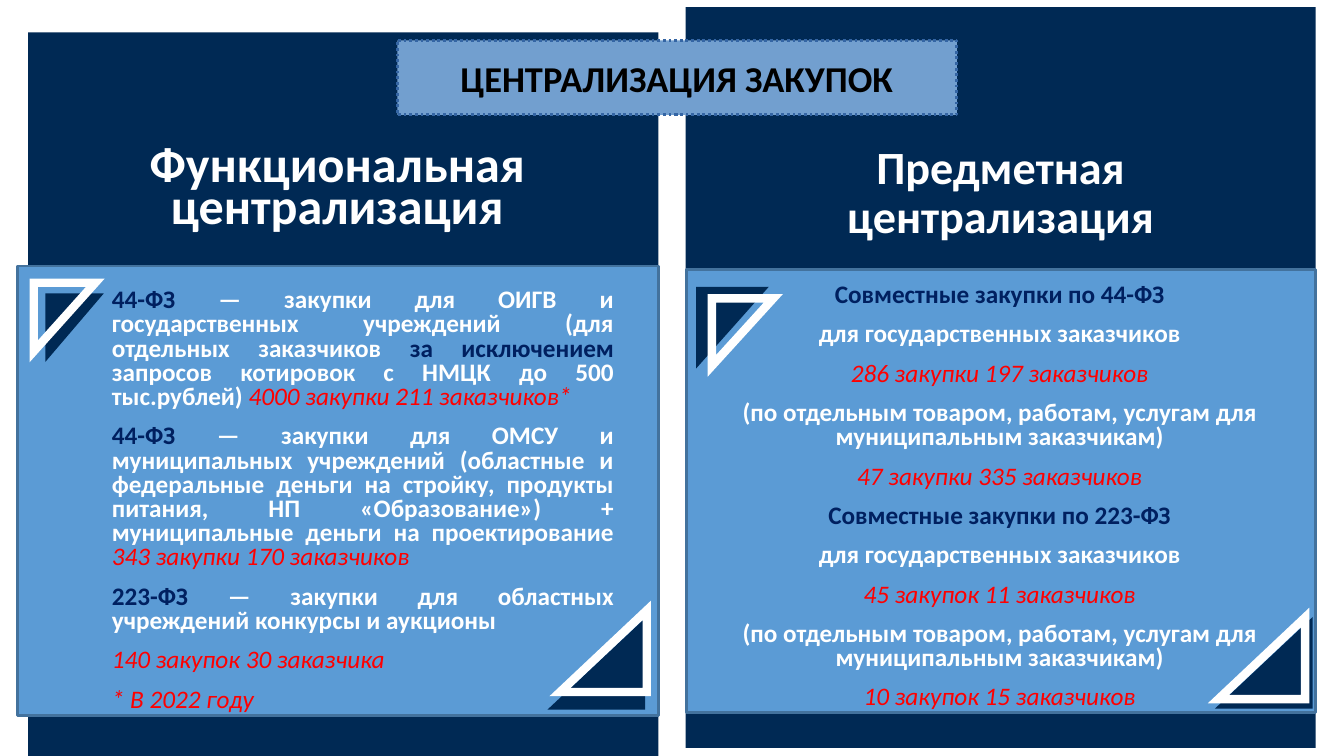
from lxml.etree import SubElement
from pptx import Presentation
from pptx.dml.color import RGBColor
from pptx.enum.dml import MSO_LINE
from pptx.enum.shapes import MSO_SHAPE
from pptx.enum.text import MSO_ANCHOR, MSO_AUTO_SIZE, PP_ALIGN
from pptx.oxml.ns import qn
from pptx.util import Pt

PX = 9144
HEX = {
    "navy": "002954", "ink": "002060", "panel": "5B9BD5", "edge": "43729D",
    "banner": "729FCF", "rim": "3465A4", "white": "FFFFFF", "red": "FF0000",
    "black": "000000",
}
FONT = "Calibri"

LAWS = [
    [("44-ФЗ", "ink"),
     (" — закупки для ОИГВ и государственных учреждений (для отдельных заказчиков ", "white"),
     ("за исключением", "ink"),
     (" запросов котировок с НМЦК до 500 тыс.рублей) ", "white"),
     ("4000 закупки 211 заказчиков*", "red")],
    [("44-ФЗ", "ink"),
     (" — закупки для ОМСУ и муниципальных учреждений (областные и федеральные деньги "
      "на стройку, продукты питания, НП «Образование») + муниципальные деньги "
      "на проектирование ", "white"),
     ("343 закупки 170 заказчиков", "red")],
    [("223-ФЗ", "ink"),
     (" — закупки для областных учреждений конкурсы и аукционы", "white")],
    [("140 закупок 30 заказчика", "red")],
    [("* В 2022 году", "red")],
]
JOINT = [
    ("44-ФЗ", "286 закупки 197 заказчиков", "47 закупки 335 заказчиков"),
    ("223-ФЗ", "45 закупок 11 заказчиков", "10 закупок 15 заказчиков"),
]


def color(name):
    return RGBColor.from_string(HEX[name])


def place(shape, box):
    shape.left, shape.top, shape.width, shape.height = [v * PX for v in box]


def paint(shape, fill=None, line=None, width=2):
    if fill:
        shape.fill.solid()
        shape.fill.fore_color.rgb = color(fill)
    else:
        shape.fill.background()
    if line:
        shape.line.color.rgb = color(line)
        shape.line.width = Pt(width)
    else:
        shape.line.fill.background()


def draw(slide, kind, box, fill=None, line=None, width=2):
    shape = slide.shapes.add_shape(kind, *[v * PX for v in box])
    shape.shadow.inherit = False
    paint(shape, fill, line, width)
    return shape


def corner(slide, turn, solid, frame):
    base = draw(slide, MSO_SHAPE.RIGHT_TRIANGLE, solid, fill="navy")
    rim = draw(slide, MSO_SHAPE.RIGHT_TRIANGLE, frame, line="white", width=6)
    SubElement(rim.line.fill._xPr, qn("a:miter"), lim="800000")
    base.rotation = rim.rotation = turn


def write(holder, box, paras, size, align, space=1.0, before=0, after=0,
          anchor=MSO_ANCHOR.TOP):
    place(holder, box)
    tree = holder.element.getparent()
    tree.append(holder.element)
    frame = holder.text_frame
    frame.word_wrap = True
    frame.auto_size = MSO_AUTO_SIZE.NONE
    frame.vertical_anchor = anchor
    for i, runs in enumerate(paras):
        para = frame.add_paragraph() if i else frame.paragraphs[0]
        para.alignment = align
        para.line_spacing = space
        para.space_before = Pt(before)
        para.space_after = Pt(after)
        para.font.name = FONT
        para.font.size = Pt(size)
        props = para._p.get_or_add_pPr()
        props.set("marL", "0")
        props.set("indent", "0")
        none = SubElement(props, qn("a:buNone"))
        props.find(qn("a:defRPr")).addprevious(none)
        for text, tone in runs:
            run = para.add_run()
            run.text = text
            run.font.color.rgb = color(tone)
            run.font.bold = tone != "red"
            run.font.italic = tone == "red"


def joint():
    for law, state, town in JOINT:
        yield [(f"Совместные закупки по {law}", "ink")]
        yield [("для государственных заказчиков", "white")]
        yield [(state, "red")]
        yield [("(по отдельным товаром, работам, услугам для муниципальным заказчикам)", "white")]
        yield [(town, "red")]


def main():
    deck = Presentation()
    deck.slide_width, deck.slide_height = 1333 * PX, 750 * PX
    slide = deck.slides.add_slide(deck.slide_layouts[4])
    title, head, body, head2, body2 = slide.placeholders

    for box in [(28, 32, 625, 735), (680, 7, 625, 735)]:
        draw(slide, MSO_SHAPE.RECTANGLE, box, fill="navy")
    for box in [(17, 264, 636, 446), (681, 267, 624, 440)]:
        draw(slide, MSO_SHAPE.RECTANGLE, box, "panel", "edge")

    mid = PP_ALIGN.CENTER
    write(head2, (680, 138, 625, 118),
          [[("Предметная", "white")], [("централизация", "white")]], 33, mid, 0.9)
    write(head, (79, 138, 511, 98), [[("Функциональная централизация", "white")]],
          35.8, mid, 0.7, 10, anchor=MSO_ANCHOR.BOTTOM)
    write(body2, (689, 277, 605, 440), joint(), 18, mid, 0.8, 4.8, 6)
    write(body, (101, 282, 518, 436), LAWS, 18, PP_ALIGN.JUSTIFY, 0.8, 4.8, 6)
    write(title, (394, 40, 555, 74), [[("ЦЕНТРАЛИЗАЦИЯ ЗАКУПОК", "black")]],
          26, mid, anchor=MSO_ANCHOR.MIDDLE)
    paint(title, "banner", "rim")
    title.line.dash_style = MSO_LINE.ROUND_DOT

    corner(slide, 270, (546, 610, 91, 97), (558, 603, 81, 86))
    corner(slide, 90, (40, 296, 68, 58), (30, 284, 68, 61))
    corner(slide, 270, (1208, 609, 91, 97), (1211, 610, 81, 86))
    corner(slide, 90, (686, 289, 81, 72), (703, 299, 67, 61))

    deck.save("out.pptx")


if __name__ == "__main__":
    main()
